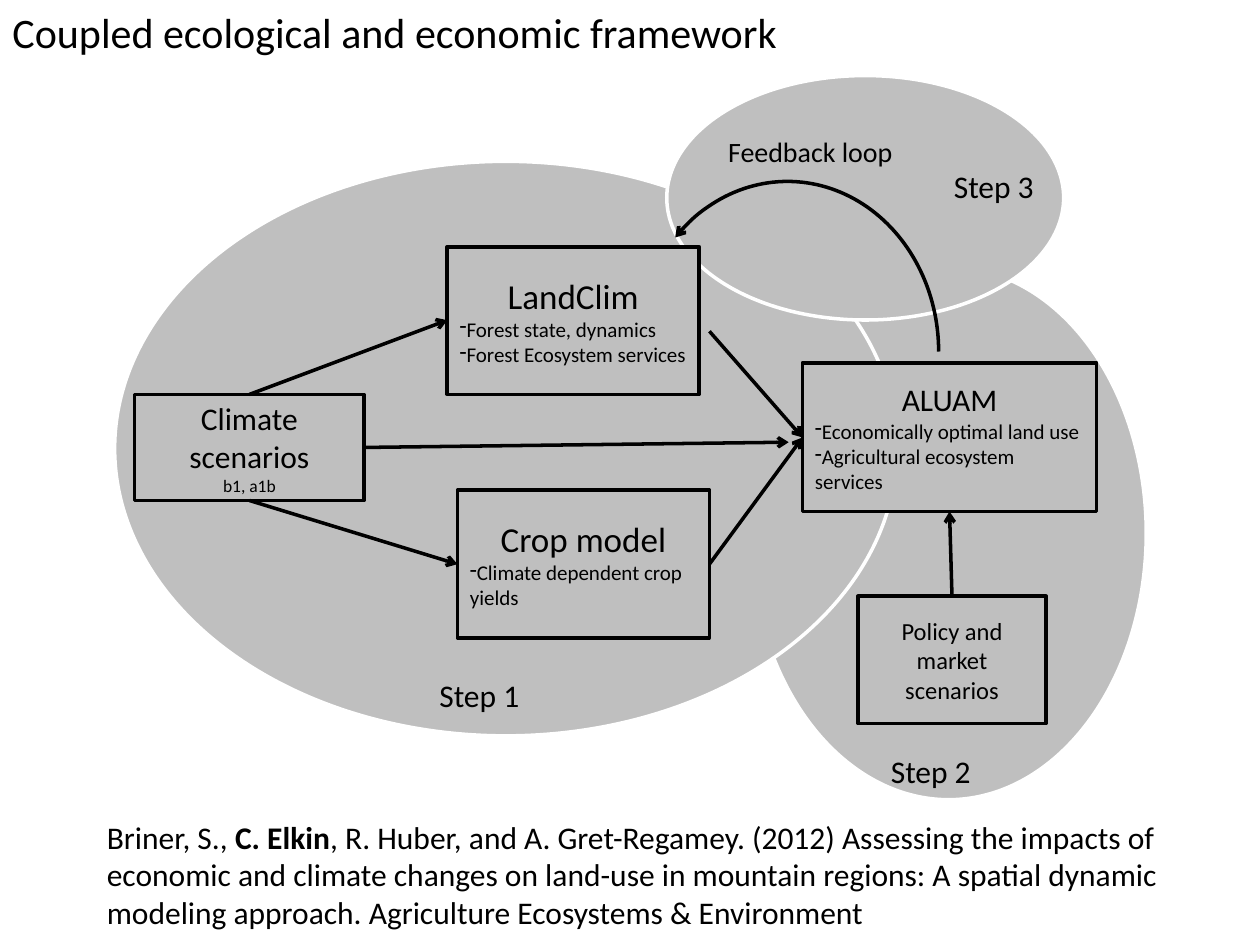
import pptx
import pptx.util
import pptx.dml.color
import pptx.enum.shapes
import pptx.enum.text
import pptx.oxml.ns
import lxml.etree

Pt = pptx.util.Pt
KIND = pptx.enum.shapes.MSO_SHAPE
ALIGN = pptx.enum.text.PP_ALIGN
HUES = {"ink": "000000", "paper": "FFFFFF", "gray": "BFBFBF"}


def hue(name):
    return pptx.dml.color.RGBColor.from_string(HUES[name])


def child(node, tag, **attrs):
    return lxml.etree.SubElement(node, pptx.oxml.ns.qn(tag), **attrs)


def write(para, text, size=18, bold=False, align=ALIGN.LEFT, bullet=False):
    para.alignment = align
    if bullet:
        props = para._p.get_or_add_pPr()
        props.set("marL", "0")
        props.set("indent", "0")
        child(props, "a:buFontTx")
        child(props, "a:buChar", char="-")
    run = para.add_run()
    run.text = text
    run.font.name = "Calibri"
    run.font.size = Pt(size)
    run.font.bold = bold
    run.font.color.rgb = hue("ink")


class Board:
    def __init__(self, slide, weight=2):
        self.slide = slide
        self.weight = weight

    def stroke(self, item, name="ink"):
        item.line.color.rgb = hue(name)
        item.line.width = Pt(self.weight)

    def tip(self, item, end):
        child(item.line._get_or_add_ln(), end, type="arrow")

    def shape(self, kind, place, line):
        item = self.slide.shapes.add_shape(kind, *map(Pt, place))
        item.shadow.inherit = False
        item.fill.solid()
        item.fill.fore_color.rgb = hue("gray")
        self.stroke(item, line)
        return item

    def oval(self, *place):
        self.shape(KIND.OVAL, place, "paper")

    def box(self, place, heads, size, notes=(), small=12, bullet=True):
        frame = self.shape(KIND.RECTANGLE, place, "ink").text_frame
        frame.word_wrap = True
        frame.vertical_anchor = pptx.enum.text.MSO_ANCHOR.MIDDLE
        rows = [(head, size, False) for head in heads]
        rows += [(note, small, bullet) for note in notes]
        for i, (text, points, dash) in enumerate(rows):
            para = frame.add_paragraph() if i else frame.paragraphs[0]
            side = ALIGN.LEFT if dash else ALIGN.CENTER
            write(para, text, size=points, align=side, bullet=dash)

    def label(self, place, *parts, size=18, wrap=False):
        frame = self.slide.shapes.add_textbox(*map(Pt, place)).text_frame
        frame.word_wrap = wrap
        frame.auto_size = pptx.enum.text.MSO_AUTO_SIZE.SHAPE_TO_FIT_TEXT
        for text, bold in parts:
            write(frame.paragraphs[0], text, size=size, bold=bold)

    def step(self, num, left, top):
        self.label((left, top, 64, 31), (f"Step {num}", False))

    def arrow(self, start, end):
        item = self.slide.shapes.add_connector(
            pptx.enum.shapes.MSO_CONNECTOR.STRAIGHT, *map(Pt, start + end))
        self.stroke(item)
        self.tip(item, "a:tailEnd")
        child(item._element.spPr, "a:effectLst")

    def loop(self, *place):
        item = self.slide.shapes.add_shape(KIND.ARC, *map(Pt, place))
        item.adjustments[0] = 135.28
        item.adjustments[1] = 0
        item.fill.background()
        self.stroke(item)
        self.tip(item, "a:headEnd")
        item.shadow.inherit = False


def main():
    deck = pptx.Presentation()
    deck.slide_width, deck.slide_height = Pt(720), Pt(540)
    board = Board(deck.slides.add_slide(deck.slide_layouts[6]))

    board.label((0, 0, 455, 36),
                ("Coupled ecological and economic framework", False), size=24)
    board.oval(429, 152.5, 226, 304.5)
    board.step(2, 502, 426)
    board.oval(65.5, 92.2, 447, 328.3)
    board.box((261.4, 280, 144, 84.5), ["Crop model"], 20,
              ["Climate dependent crop yields"])
    board.box((77, 225.4, 131, 60.6), ["Climate", "scenarios"], 18,
              ["b1, a1b"], small=10, bullet=False)
    board.oval(381, 43.2, 226.8, 139.7)
    board.box((255.6, 141, 144, 84.4), ["LandClim"], 20,
              ["Forest state, dynamics", "Forest Ecosystem services"])
    board.box((458.6, 207.3, 168, 85), ["ALUAM"], 18,
              ["Economically optimal land use",
               "Agricultural ecosystem services"])
    board.box((490.3, 340.7, 107.5, 72.8),
              ["Policy and market scenarios"], 14)
    board.step(1, 244, 383)
    board.step(3, 538, 92)

    goal = (458.6, 250)
    for start, end in (
        ((142.5, 225.4), (255.6, 183)),
        ((142.5, 286), (261.4, 322.4)),
        ((405.4, 189.3), goal),
        ((405.4, 322.4), goal),
        ((544, 340.7), (542.6, 292.3)),
        ((208, 255.7), (450.7, 252.7)),
    ):
        board.arrow(start, end)
    board.label((409, 73.4, 115, 29), ("Feedback loop", False), size=16)
    board.loop(363.6, 103.7, 172.8, 194.4)

    board.label(
        (54, 463.7, 632, 72.7),
        ("Briner, S., ", False),
        ("C. Elkin", True),
        (", R. Huber, and A. Gret-Regamey. (2012) Assessing the impacts of "
         "economic and climate changes on land-use in mountain regions: "
         "A spatial dynamic modeling approach. "
         "Agriculture Ecosystems & Environment", False),
        wrap=True)
    deck.save("out.pptx")


if __name__ == "__main__":
    main()
